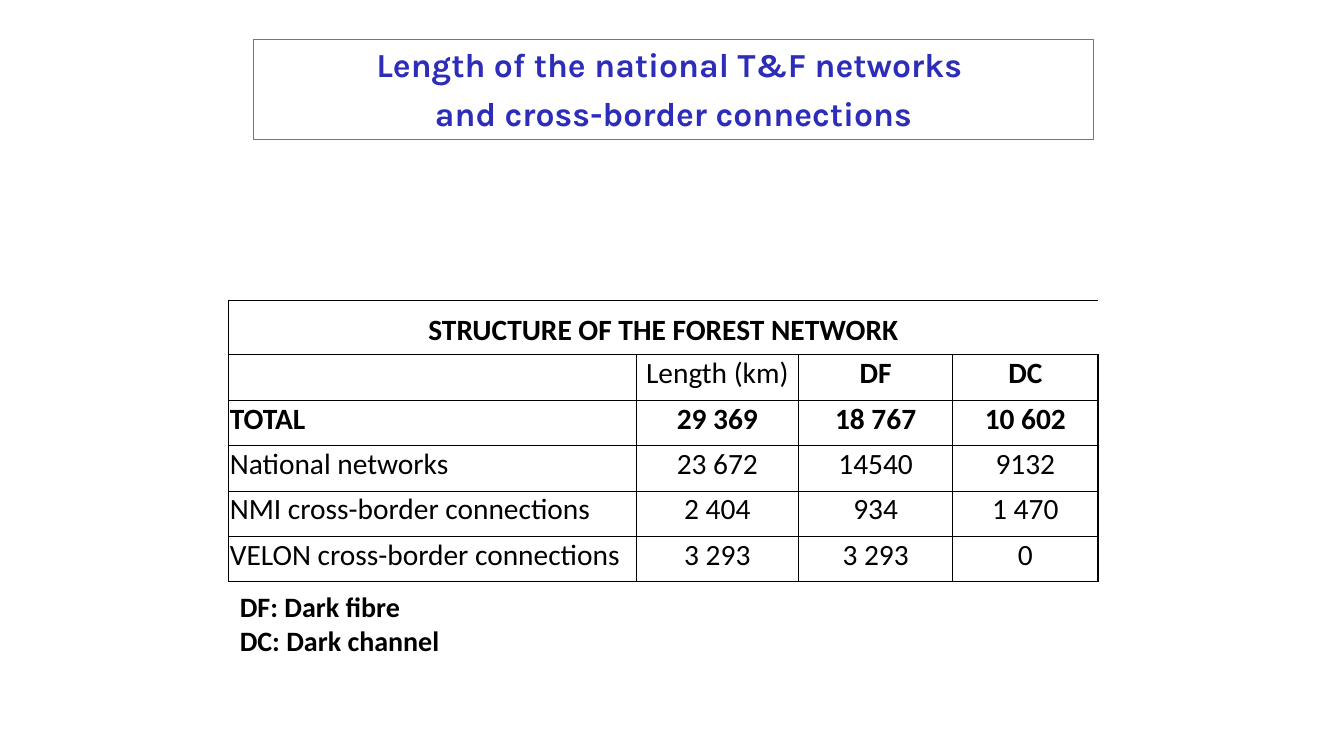
from lxml.etree import SubElement
from pptx import Presentation
from pptx.dml.color import RGBColor
from pptx.enum.text import MSO_ANCHOR, MSO_AUTO_SIZE, PP_ALIGN
from pptx.oxml.ns import qn
from pptx.util import Inches, Pt

COLORS = {"title": "2D2DB9", "frame": "3180FA", "ink": "000000"}


def write_lines(frame, text, size=21, font="Calibri", color="ink", bold=False,
                align=PP_ALIGN.LEFT, after=0):
    for index, line in enumerate(text.split("\n")):
        paragraph = frame.paragraphs[0] if index == 0 else frame.add_paragraph()
        paragraph.alignment = align
        paragraph.space_after = Pt(after)
        run = paragraph.add_run()
        run.text = line
        run.font.size = Pt(size)
        run.font.name = font
        run.font.bold = bold
        run.font.color.rgb = RGBColor.from_string(COLORS[color])


def set_borders(cell, widths):
    properties = cell._tc.get_or_add_tcPr()
    for position, (side, width) in enumerate(widths.items()):
        border = properties.makeelement(qn(f"a:ln{side}"), {"w": str(Pt(width))})
        if width:
            fill = SubElement(border, qn("a:solidFill"))
            SubElement(fill, qn("a:srgbClr"), val=COLORS["ink"])
        else:
            SubElement(border, qn("a:noFill"))
        properties.insert(position, border)


prs = Presentation()
prs.slide_width = Inches(13.33)
prs.slide_height = Inches(7.5)
slide = prs.slides.add_slide(prs.slide_layouts[5])

title = slide.shapes.title
title.left, title.top = Inches(2.51), Inches(0.39)
title.width, title.height = Inches(8.34), Inches(0.99)
title.line.color.rgb = RGBColor.from_string(COLORS["frame"])
title.line.width = Pt(0.75)
title.text_frame.vertical_anchor = MSO_ANCHOR.TOP
title.text_frame.auto_size = MSO_AUTO_SIZE.SHAPE_TO_FIT_TEXT
write_lines(title.text_frame,
            "Length of the national T&F networks \nand cross-border connections",
            size=24, font="Karla", color="title", bold=True,
            align=PP_ALIGN.CENTER, after=6)

network_rows = [
    ["STRUCTURE OF THE FOREST NETWORK", "", "", ""],
    ["", "Length (km)", "DF", "DC"],
    ["TOTAL", "29 369", "18 767", "10 602"],
    ["National networks", "23 672", "14540", "9132"],
    ["NMI cross-border connections", "2 404", "934", "1 470"],
    ["VELON cross-border connections", "3 293", "3 293", "0"],
]
column_widths = [4.04, 1.61, 1.53, 1.44]
row_heights = [0.54] + [0.45] * 5
column_rules = [1, 0.5, 1, 0.5, 1]
row_rules = [1, 1, 0.5, 0.5, 0.5, 1, 1]
bold_labels = {"DF", "DC"}

network = slide.shapes.add_table(
    len(row_heights), len(column_widths), Inches(2.27), Inches(2.98),
    Inches(sum(column_widths)), Inches(sum(row_heights))).table
network.first_row = False
network.horz_banding = False
for column, width in zip(network.columns, column_widths):
    column.width = Inches(width)
for row, height in zip(network.rows, row_heights):
    row.height = Inches(height)
network.cell(0, 0).merge(network.cell(0, 3))

for r, values in enumerate(network_rows):
    heading = r == 0
    for c, value in enumerate(values):
        cell = network.cell(r, c)
        cell.fill.background()
        set_borders(cell, {
            "L": 0 if heading and c else column_rules[c],
            "R": 0 if heading else column_rules[c + 1],
            "T": row_rules[r],
            "B": row_rules[r + 1],
        })
        side, top, bottom = (0.12, 0.06, 0.06) if heading else (0.01, 0.01, 0.09)
        cell.margin_left = cell.margin_right = Inches(side)
        cell.margin_top, cell.margin_bottom = Inches(top), Inches(bottom)
        cell.vertical_anchor = MSO_ANCHOR.MIDDLE if c else MSO_ANCHOR.BOTTOM
        if value:
            write_lines(cell.text_frame, value,
                        bold=r in (0, 2) or value in bold_labels,
                        align=PP_ALIGN.CENTER if heading or c else PP_ALIGN.LEFT)

legend = slide.shapes.add_textbox(Inches(2.28), Inches(5.8), Inches(2.2), Inches(0.77))
legend.text_frame.word_wrap = False
legend.text_frame.auto_size = MSO_AUTO_SIZE.SHAPE_TO_FIT_TEXT
write_lines(legend.text_frame, "DF: Dark fibre\nDC: Dark channel", size=20, bold=True)

prs.save("out.pptx")
